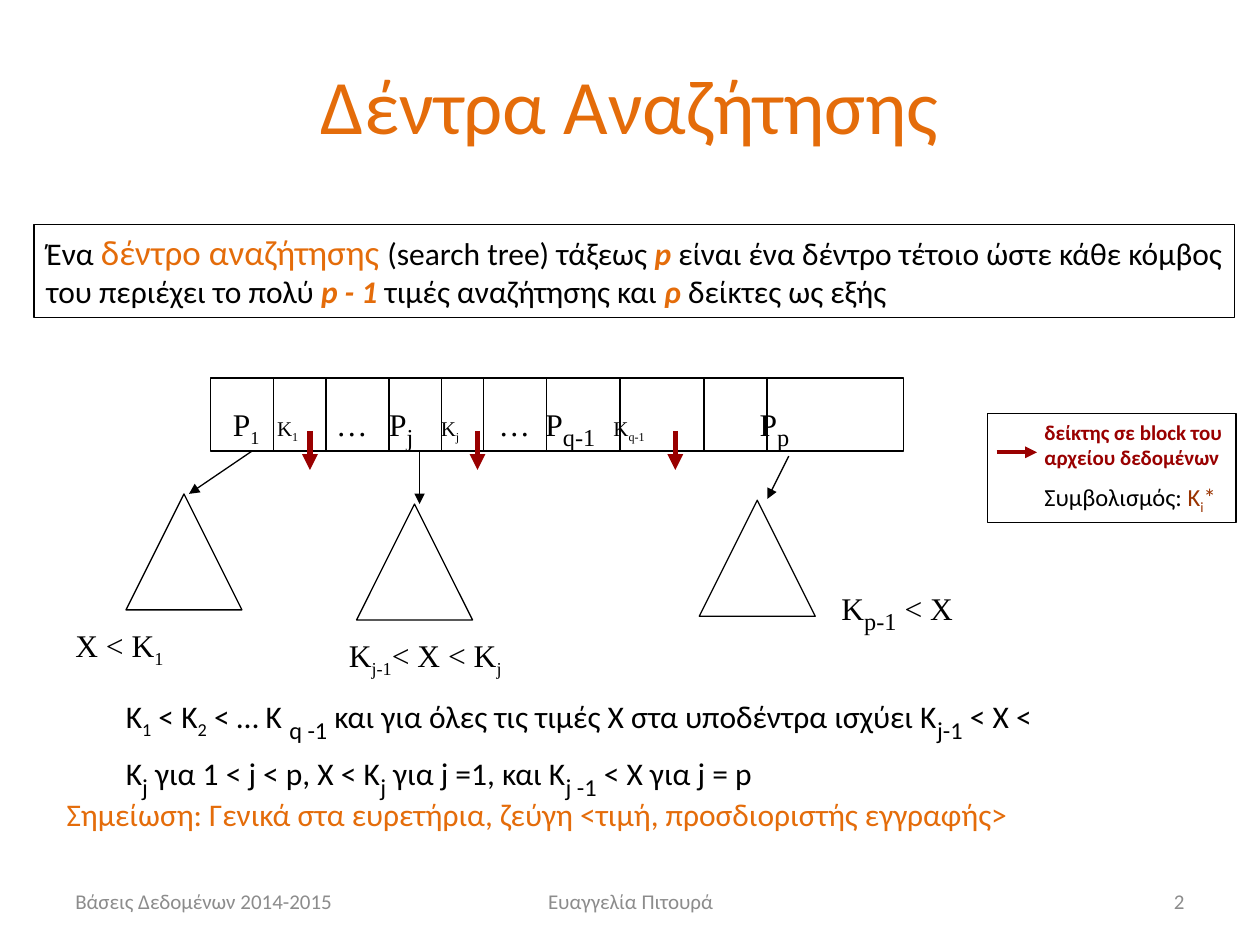
from lxml.etree import SubElement
from pptx import Presentation
from pptx.dml.color import RGBColor
from pptx.enum.shapes import MSO_CONNECTOR, MSO_SHAPE
from pptx.enum.text import MSO_ANCHOR, PP_ALIGN
from pptx.oxml.ns import qn
from pptx.util import Inches, Pt

BLACK = RGBColor(0x00, 0x00, 0x00)
WHITE = RGBColor(0xFF, 0xFF, 0xFF)
ORANGE = RGBColor(0xE4, 0x6C, 0x0A)
GRAY = RGBColor(0x8C, 0x8C, 0x8C)
RED = RGBColor(0x99, 0x00, 0x00)
BROWN = RGBColor(0x99, 0x33, 0x00)
SANS, SERIF = "Calibri", "Times New Roman"

# Run styles
SUB = {"sub": True}
BIG_SUB = {"sub": True, "size": 24}
KEY = {"size": 12}
KEY_SUB = {"size": 12, "sub": True}
TERM = {"color": ORANGE, "bold": True, "italic": True}

# Content: a paragraph is a list of plain strings or (string, style) runs
TITLE = ["Δέντρα Αναζήτησης"]
DEFINITION = [
    "Ένα ", ("δέντρο αναζήτησης ", {"size": 20, "color": ORANGE}),
    "(search tree) τάξεως ", ("p ", TERM),
    "είναι ένα δέντρο τέτοιο ώστε κάθε κόμβος του περιέχει το πολύ ",
    ("p - 1 ", TERM), "τιμές αναζήτησης και ", ("ρ", TERM), " δείκτες ως εξής"]
CONDITION = [
    "Κ", ("1", SUB), " < Κ", ("2", SUB), " < … Κ ", ("q -1", BIG_SUB),
    " και για όλες τις τιμές X στα υποδέντρα ισχύει Κ", ("j-1", BIG_SUB),
    " < X < K", ("j", BIG_SUB), " για 1 < j < p, X < K", ("j", BIG_SUB),
    " για j =1, και Κ", ("j -1", BIG_SUB), " < Χ για j = p"]
NOTE = ["Σημείωση: Γενικά στα ευρετήρια, ζεύγη <τιμή, προσδιοριστής εγγραφής>"]
NODE_LABELS = [  # left edge of each label, runs
    (1.85, ["P", ("1", SUB)]),
    (2.20, [("K", KEY), ("1", KEY_SUB)]),
    (2.67, ["…"]),
    (3.09, ["P", ("j", BIG_SUB)]),
    (3.50, [("K", KEY), ("j", KEY_SUB)]),
    (3.96, ["…"]),
    (4.33, ["P", ("q-1", BIG_SUB)]),
    (4.87, [("K", KEY), ("q-1", KEY_SUB)]),
    (6.03, ["P", ("p", BIG_SUB)])]
SUBTREES = [  # triangle corner, arrow from, arrow to, caption box, caption
    ((1, 3.92), (2, 3.58), (1.5, 3.92), (0.5, 4.92, 1.67, 0.43),
     ["X < K", ("1", SUB)]),
    ((2.83, 4), (3.33, 3.58), (3.33, 4), (2.67, 5, 1.67, 0.43),
     ["K", ("j-1", SUB), "< X < K", ("j", SUB)]),
    ((5.55, 3.97), (6.26, 3.62), (6.09, 3.96), (6.58, 4.54, 1.72, 0.4),
     ["K", ("p-1", BIG_SUB), " < X"])]
LEGEND = [
    [("δείκτης σε block του αρχείου δεδομένων",
      {"size": 12, "color": RED, "bold": True})],
    ["Συμβολισμός: ", ("K", {"color": BROWN}),
     ("i", {"color": BROWN, "sub": True}), ("*", {"color": BROWN})]]
FOOTERS = [
    (0.5, 2.33, PP_ALIGN.LEFT, "Βάσεις Δεδομένων 2014-2015"),
    (3.42, 3.17, PP_ALIGN.CENTER, "Ευαγγελία Πιτουρά"),
    (7.17, 2.33, PP_ALIGN.RIGHT, "2")]

# Node geometry: cell widths in twelfths of an inch
NODE_X, NODE_Y, NODE_H = 1.67, 3, 0.58
CELL_UNITS = [6, 5, 6, 5, 4, 6, 7, 8, 6, 13]
DATA_ARROW_XS = [2.46, 3.79, 5.36]
TRIANGLE = 0.92

prs = Presentation()
prs.slide_width, prs.slide_height = Inches(10), Inches(7.5)
s = prs.slides.add_slide(prs.slide_layouts[6])


def write(tf, paras, size=18, font=SANS, color=BLACK, align=PP_ALIGN.LEFT,
          anchor=MSO_ANCHOR.TOP):
    tf.word_wrap = True
    tf.vertical_anchor = anchor
    for i, runs in enumerate(paras):
        p = tf.add_paragraph() if i else tf.paragraphs[0]
        p.alignment = align
        p.font.name, p.font.size, p.font.color.rgb = font, Pt(size), color
        if i:
            p.space_before = Pt(size / 2)
        for run in runs:
            text, style = (run, {}) if isinstance(run, str) else run
            r = p.add_run()
            r.text = text
            r.font.name = font
            r.font.size = Pt(style.get("size", size))
            r.font.color.rgb = style.get("color", color)
            r.font.bold = style.get("bold")
            r.font.italic = style.get("italic")
            if style.get("sub"):
                r.font._element.set("baseline", "-25000")


def add_text(box, *paras, **look):
    sp = s.shapes.add_textbox(*map(Inches, box))
    write(sp.text_frame, paras, **look)
    return sp


def add_outline(kind, box, fill=None):
    sp = s.shapes.add_shape(kind, *map(Inches, box))
    sp.shadow.inherit = False
    if fill is None:
        sp.fill.background()
    else:
        sp.fill.solid()
        sp.fill.fore_color.rgb = fill
    sp.line.color.rgb, sp.line.width = BLACK, Pt(0.75)
    return sp


def add_line(start, end, color=BLACK, width=0.75, arrow=True):
    line = s.shapes.add_connector(MSO_CONNECTOR.STRAIGHT,
                                  *map(Inches, (*start, *end)))
    line.line.color.rgb, line.line.width = color, Pt(width)
    if arrow:
        SubElement(line.line._get_or_add_ln(), qn("a:tailEnd"), type="triangle")
    SubElement(line._element.spPr, qn("a:effectLst"))


# Title and definition
add_text((0.5, 0.2, 9, 1.25), TITLE, size=44, color=ORANGE,
         align=PP_ALIGN.CENTER, anchor=MSO_ANCHOR.MIDDLE)
definition = add_outline(MSO_SHAPE.RECTANGLE, (0.27, 1.78, 9.53, 0.74))
write(definition.text_frame, [DEFINITION], align=PP_ALIGN.JUSTIFY)

# Subtrees with their pointers and captions
for corner, start, end, box, caption in SUBTREES:
    add_outline(MSO_SHAPE.ISOSCELES_TRIANGLE, (*corner, TRIANGLE, TRIANGLE), WHITE)
    add_line(start, end)
    add_text(box, caption, font=SERIF)

# Node: frame, dividers, labels on tab stops
add_outline(MSO_SHAPE.RECTANGLE, (NODE_X, NODE_Y, sum(CELL_UNITS) / 12, NODE_H))
for i in range(1, len(CELL_UNITS)):
    x = NODE_X + sum(CELL_UNITS[:i]) / 12
    add_line((x, NODE_Y), (x, NODE_Y + NODE_H), arrow=False)

label_x = NODE_LABELS[0][0]
label_runs = []
for i, (x, runs) in enumerate(NODE_LABELS):
    label_runs += (["\t"] if i else []) + runs
labels = add_text((1.75, 3.08, 6.92, 0.5), label_runs, font=SERIF)
pPr = labels.text_frame.paragraphs[0]._p.get_or_add_pPr()
tabs = pPr.makeelement(qn("a:tabLst"), {})
pPr.insert(0, tabs)
for x, _ in NODE_LABELS[1:]:
    SubElement(tabs, qn("a:tab"), pos=str(Inches(x - label_x)), algn="l")

# Data pointers
for x in DATA_ARROW_XS:
    add_line((x, 3.42), (x, 3.73), RED, 3)

# Legend
add_outline(MSO_SHAPE.RECTANGLE, (7.84, 3.28, 1.97, 0.87))
add_line((7.91, 3.59), (8.23, 3.59), RED, 2.25)
add_text((8.19, 3.28, 1.81, 1.21), *LEGEND, size=14)

# Condition, note and footers
add_text((0.9, 5.4, 7.5, 0.7), CONDITION)
add_text((0.43, 6.26, 9.06, 0.4), NOTE, color=ORANGE)
for x, width, align, text in FOOTERS:
    add_text((x, 6.95, width, 0.4), [text], size=12, color=GRAY, align=align,
             anchor=MSO_ANCHOR.MIDDLE)

prs.save("out.pptx")
